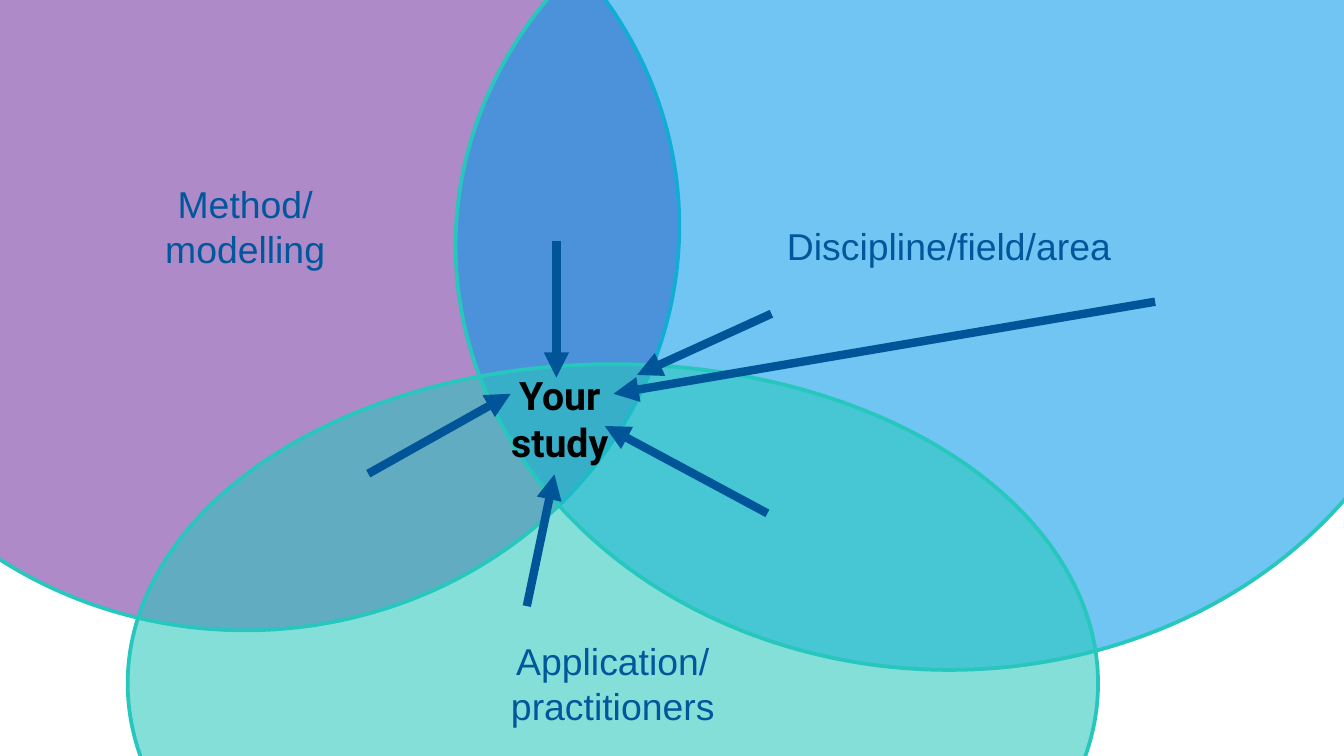
"""Build a slide of three overlapping fields with arrows pointing to the study they share."""
import pptx
import pptx.util
import pptx.dml.color
import pptx.enum.shapes
import pptx.enum.text
import pptx.oxml.ns
import lxml.etree

PX = 4572
qn = pptx.oxml.ns.qn


def rgb(value):
    return pptx.dml.color.RGBColor.from_string(value)


def write(tf, lines, size, font, color, bold=False):
    tf.word_wrap = True
    for i, line in enumerate(lines):
        p = tf.paragraphs[0] if i == 0 else tf.add_paragraph()
        p.alignment = pptx.enum.text.PP_ALIGN.CENTER
        r = p.add_run()
        r.text = line
        r.font.size = pptx.util.Pt(size)
        r.font.name = font
        r.font.bold = bold
        r.font.color.rgb = rgb(color)


prs = pptx.Presentation()
prs.slide_width = 2000 * PX
prs.slide_height = 1125 * PX
s = prs.slides.add_slide(prs.slide_layouts[6])

fields = [
    ((-281, -266, 1292, 1204), "7030A0", ["Method/", "modelling"]),
    ((678, -266, 1469, 1263), "0099E8", ["Discipline/field/area"]),
    ((190, 542, 1444, 950), "27C7BD", ["Application/", "practitioners"]),
]
for box, color, lines in fields:
    sp = s.shapes.add_shape(pptx.enum.shapes.MSO_SHAPE.OVAL, *[v * PX for v in box])
    sp.shadow.inherit = False
    sp.fill.solid()
    sp.fill.fore_color.rgb = rgb(color)
    clr = sp.fill._xPr.find(qn("a:solidFill"))[0]
    lxml.etree.SubElement(clr, qn("a:alpha")).set("val", "56000")
    sp.line.color.rgb = rgb("27C7BD")
    sp.line.width = pptx.util.Pt(2)
    sp.text_frame.vertical_anchor = pptx.enum.text.MSO_ANCHOR.MIDDLE
    write(sp.text_frame, lines, 20, "Arial", "01579B")

sp = s.shapes.add_textbox(678 * PX, 533 * PX, 294 * PX, 108 * PX)
tf = sp.text_frame
tf.margin_left = tf.margin_right = tf.margin_top = tf.margin_bottom = 20 * PX
write(tf, ["Your", "study"], 21, "Roboto", "000000", True)
for p in tf.paragraphs:
    pPr = p._p.get_or_add_pPr()
    pPr.set("marL", str(100 * PX))
    pPr.set("indent", str(-84 * PX))

arrows = [
    (828, 359, 828, 562),
    (1148, 467, 948, 558),
    (1142, 764, 900, 634),
    (784, 902, 825, 706),
    (548, 705, 760, 586),
    (1719, 449, 913, 586),
]
for ends in arrows:
    arrow = s.shapes.add_connector(
        pptx.enum.shapes.MSO_CONNECTOR.STRAIGHT, *[v * PX for v in ends])
    arrow.line.color.rgb = rgb("005599")
    arrow.line.width = pptx.util.Pt(4.5)
    ln = arrow.line._get_or_add_ln()
    lxml.etree.SubElement(ln, qn("a:tailEnd")).set("type", "triangle")
    lxml.etree.SubElement(arrow._element.spPr, qn("a:effectLst"))

prs.save("out.pptx")
